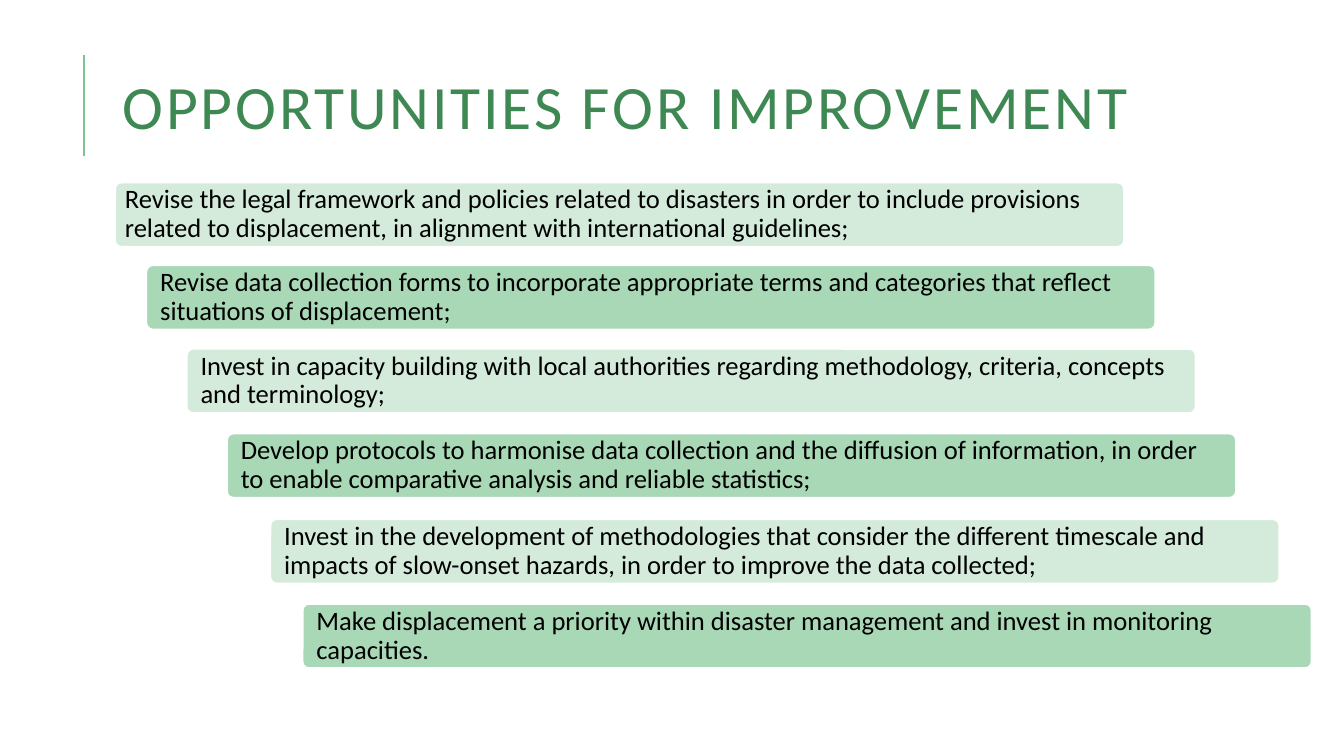
import pptx
import pptx.util
import pptx.dml.color
import pptx.enum.shapes
import pptx.enum.text
import pptx.oxml.ns
import lxml.etree

Inches = pptx.util.Inches
Pt = pptx.util.Pt
rgb = pptx.dml.color.RGBColor.from_string

THEME = {
    "font": "Calibri", "title_size": 44, "body_size": 19,
    "title": "3E8853", "accent": "7EC492", "text": "000000",
    "edge": "FFFFFF", "bars": ["D4EBDB", "A9D8B7"],
}
BAR_W, BAR_H = 10.01, 0.64

OPPORTUNITIES = [
    (1.14, 1.81, "Revise the legal framework and policies related to disasters in order to include provisions related to displacement, in alignment with international guidelines;"),
    (1.45, 2.63, "Revise data collection forms to incorporate appropriate terms and categories that reflect situations of displacement;"),
    (1.85, 3.46, "Invest in capacity building with local authorities regarding methodology, criteria, concepts and terminology;"),
    (2.25, 4.30, "Develop protocols to harmonise data collection and the diffusion of information, in order to enable comparative analysis and reliable statistics;"),
    (2.68, 5.15, "Invest in the development of methodologies that consider the different timescale and impacts of slow-onset hazards, in order to improve the data collected;"),
    (3.00, 5.99, "Make displacement a priority within disaster management and invest in monitoring capacities."),
]


def write(sp, text, size, color, spacing):
    tf = sp.text_frame
    tf.text = text
    tf.word_wrap = True
    tf.vertical_anchor = pptx.enum.text.MSO_ANCHOR.MIDDLE
    p = tf.paragraphs[0]
    p.alignment = pptx.enum.text.PP_ALIGN.LEFT
    p.line_spacing = spacing
    r = p.runs[0]
    r.font.name = THEME["font"]
    r.font.size = Pt(size)
    r.font.color.rgb = rgb(color)
    return r


prs = pptx.Presentation()
prs.slide_width = Inches(13.33)
prs.slide_height = Inches(7.5)
s = prs.slides.add_slide(prs.slide_layouts[6])

rule = s.shapes.add_connector(
    pptx.enum.shapes.MSO_CONNECTOR.STRAIGHT,
    Inches(0.83), Inches(1.55), Inches(0.83), Inches(0.55))
rule.line.color.rgb = rgb(THEME["accent"])
rule.line.width = Pt(1.5)
lxml.etree.SubElement(rule._element.spPr, pptx.oxml.ns.qn("a:effectLst"))

title = s.shapes.add_textbox(Inches(1.12), Inches(0.29), Inches(11.36), Inches(1.64))
r = write(title, "OPPORTUNITIES FOR IMPROVEMENT", THEME["title_size"], THEME["title"], 0.8)
r._r.get_or_add_rPr().set("spc", "200")

for i, (left, top, text) in enumerate(OPPORTUNITIES):
    sp = s.shapes.add_shape(
        pptx.enum.shapes.MSO_SHAPE.ROUNDED_RECTANGLE,
        Inches(left), Inches(top), Inches(BAR_W), Inches(BAR_H))
    sp.adjustments[0] = 0.1
    sp.shadow.inherit = False
    sp.fill.solid()
    sp.fill.fore_color.rgb = rgb(THEME["bars"][i % 2])
    sp.line.color.rgb = rgb(THEME["edge"])
    sp.line.width = Pt(1.5)
    write(sp, text, THEME["body_size"], THEME["text"], 0.9)
    tf = sp.text_frame
    tf.margin_left = Inches(0.12 if i else 0.08)
    tf.margin_right = Inches(0.22)
    tf.margin_top = tf.margin_bottom = 0

prs.save("out.pptx")
